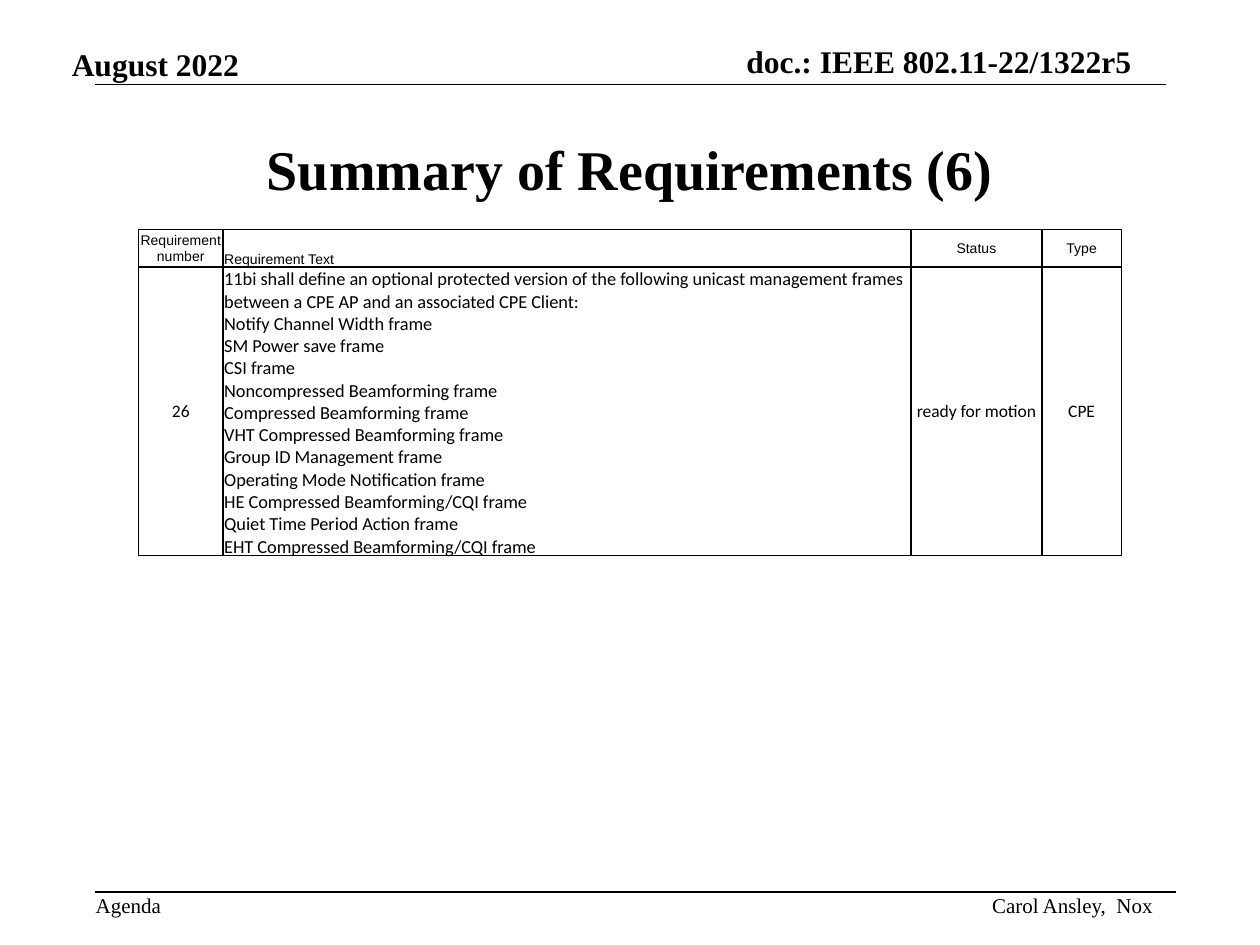
"""Build the requirements summary slide."""
from lxml import etree
from pptx import Presentation, util as u
from pptx.dml.color import RGBColor
from pptx.enum import shapes, text
from pptx.oxml.ns import qn

INK = {"black": "000000"}
SERIF = "Times New Roman"
LEFT, MID, RIGHT = text.PP_ALIGN.LEFT, text.PP_ALIGN.CENTER, text.PP_ALIGN.RIGHT
LOW, HALF, TOP = text.MSO_ANCHOR.BOTTOM, text.MSO_ANCHOR.MIDDLE, text.MSO_ANCHOR.TOP

LABELS = [
    ("August 2022", (0.57, 0.36, 1.34, 0.3), 18, True, LEFT, LOW, False),
    ("Agenda", (0.76, 7.08, 0.53, 0.2), 12, False, LEFT, TOP, False),
    ("doc.: IEEE 802.11-22/1322r5", (5.88, 0.33, 3.1, 0.3), 18, True, RIGHT, LOW, False),
    ("Carol Ansley,  Nox", (7.85, 7.08, 1.3, 0.2), 12, False, RIGHT, LOW, False),
    ("Summary of Requirements (6)", (0.75, 0.75, 8.5, 1.17), 32, True, MID, HALF, True),
]
RULES = [(0.75, 9.25, 0.67), (0.75, 9.33, 7.08)]
FRAMES = [
    "Notify Channel Width", "SM Power save", "CSI", "Noncompressed Beamforming",
    "Compressed Beamforming", "VHT Compressed Beamforming", "Group ID Management",
    "Operating Mode Notification", "HE Compressed Beamforming/CQI",
    "Quiet Time Period Action", "EHT Compressed Beamforming/CQI",
]
INTRO = ("11bi shall define an optional protected version of the following unicast "
         "management frames between a CPE AP and an associated CPE Client:")
NEED = "\n".join([INTRO] + [f"{name} frame" for name in FRAMES])
ROWS = [
    ("Arial", (8, 8, 8, 8), ("Requirement number", "Requirement Text", "Status", "Type")),
    ("Calibri", (10, 10.5, 10, 10), ("26", NEED, "ready for motion", "CPE")),
]
COLS, HIGH = (0.67, 5.46, 1.04, 0.63), (0.3, 2.29)


def style(para, face, size, bold, align):
    para.alignment = align
    font = para.font
    font.name, font.size, font.bold = face, u.Pt(size), bold
    font.color.rgb = RGBColor.from_string(INK["black"])


def label(slide, words, box, size, bold, align, anchor, wrap):
    frame = slide.shapes.add_textbox(*map(u.Inches, box)).text_frame
    frame.margin_left = frame.margin_right = frame.margin_top = frame.margin_bottom = 0
    frame.word_wrap, frame.vertical_anchor = wrap, anchor
    if not wrap:
        frame.auto_size = text.MSO_AUTO_SIZE.SHAPE_TO_FIT_TEXT
    para = frame.paragraphs[0]
    para.text = words
    style(para, SERIF, size, bold, align)


def rule(slide, left, right, y):
    line = slide.shapes.add_connector(
        shapes.MSO_CONNECTOR.STRAIGHT, *map(u.Inches, (left, y, right, y)))
    line.line.color.rgb = RGBColor.from_string(INK["black"])
    line.line.width = u.Pt(1)
    etree.SubElement(line._element.spPr, qn("a:effectLst"))


def border(cell):
    props = cell._tc.get_or_add_tcPr()
    for spot, side in enumerate(("a:lnL", "a:lnR", "a:lnT", "a:lnB")):
        edge = etree.Element(qn(side), w=str(u.Pt(1)))
        fill = etree.SubElement(edge, qn("a:solidFill"))
        etree.SubElement(fill, qn("a:srgbClr"), val=INK["black"])
        props.insert(spot, edge)


def grid(slide):
    box = map(u.Inches, (1.1, 1.82, sum(COLS), sum(HIGH)))
    table = slide.shapes.add_table(len(ROWS), len(COLS), *box).table
    table.first_row = table.horz_banding = False
    for col, wide in zip(table.columns, COLS):
        col.width = u.Inches(wide)
    for r, (face, sizes, words) in enumerate(ROWS):
        table.rows[r].height = u.Inches(HIGH[r])
        for c, (size, word) in enumerate(zip(sizes, words)):
            cell = table.cell(r, c)
            cell.margin_left = cell.margin_right = cell.margin_top = u.Inches(0.01)
            cell.margin_bottom = 0
            cell.vertical_anchor = LOW if c == 1 else HALF
            cell.fill.background()
            border(cell)
            para = cell.text_frame.paragraphs[0]
            para.text = word
            style(para, face, size, False, LEFT if c == 1 else MID)


def main():
    deck = Presentation()
    deck.slide_width, deck.slide_height = u.Inches(10), u.Inches(7.5)
    slide = deck.slides.add_slide(deck.slide_layouts[6])
    for item in RULES:
        rule(slide, *item)
    for item in LABELS:
        label(slide, *item)
    grid(slide)
    deck.save("out.pptx")


if __name__ == "__main__":
    main()
